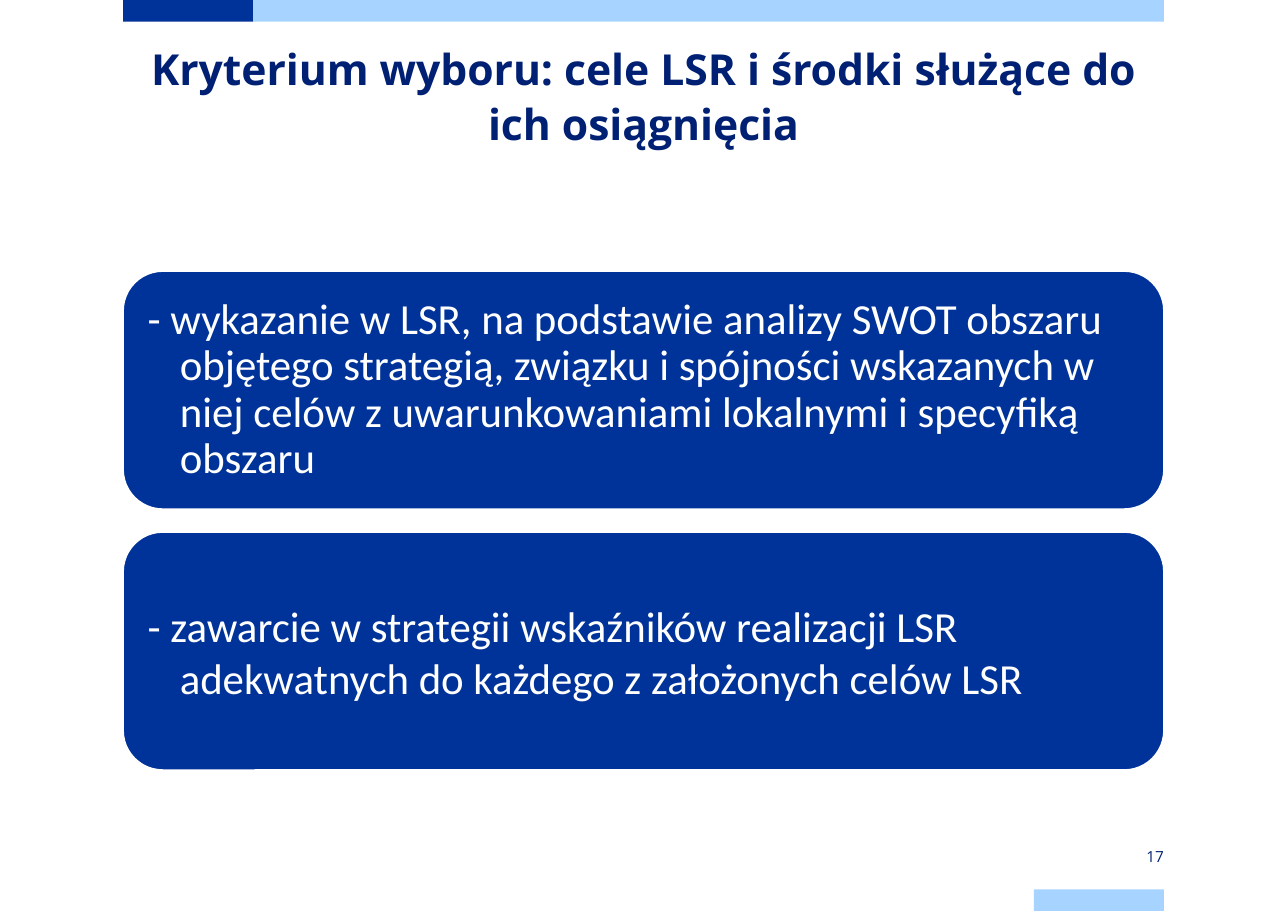
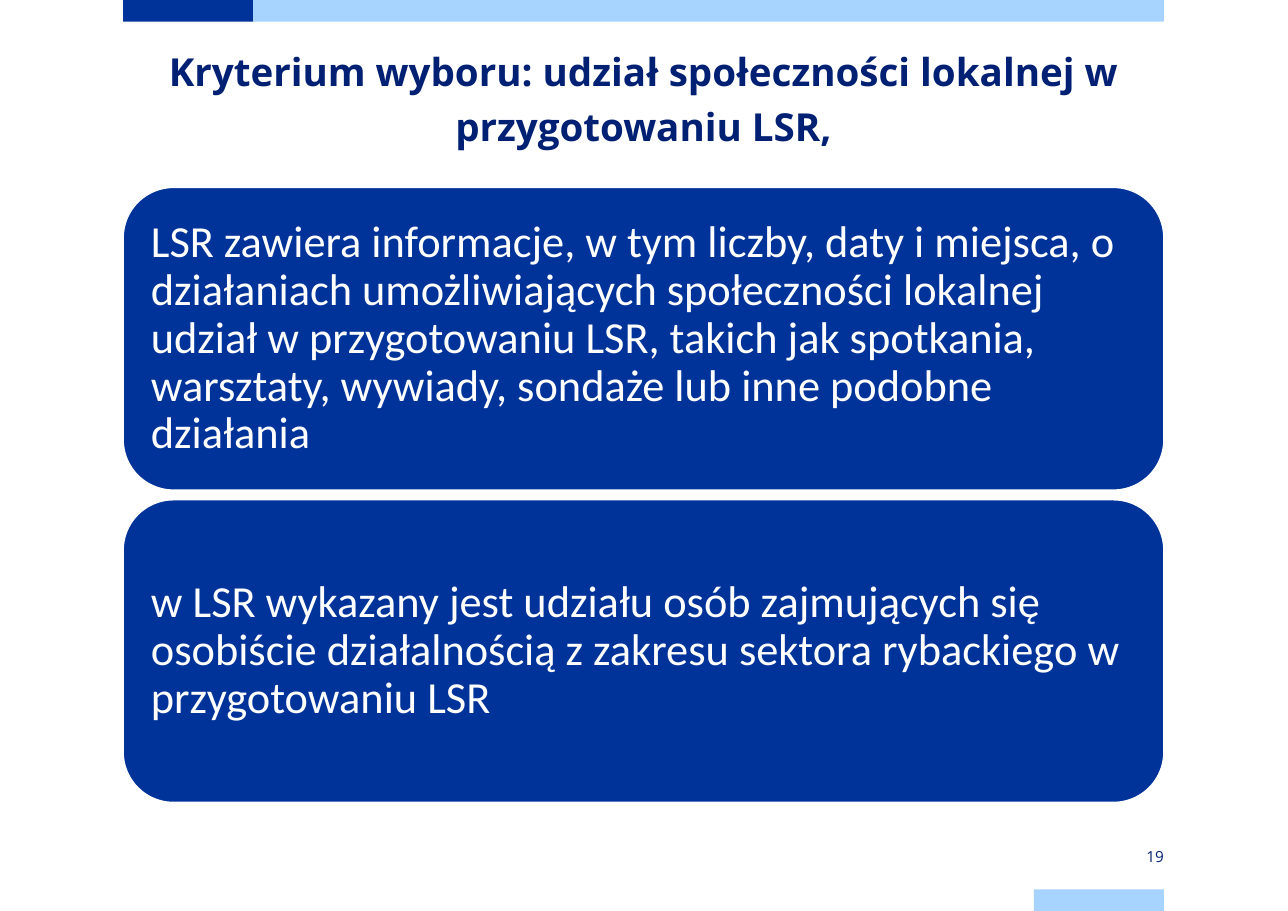
"""Build two slides on the selection criteria for local strategies."""
from pptx import Presentation
from pptx.dml.color import RGBColor
from pptx.enum.shapes import MSO_SHAPE
from pptx.enum.text import MSO_ANCHOR, MSO_AUTO_SIZE, PP_ALIGN
from pptx.util import Cm, Pt

COLORS = {"navy": "003399", "sky": "A6D3FF", "ink": "002073", "white": "FFFFFF"}
HEAD, BODY = "Open Sans", "Calibri"
LEFT, WIDTH, UNIT, BAND = 2.84, 24, 3, 0.5
PAGE_W, PAGE_H = 29.7, 21

SLIDES = [
    {
        "title": "Kryterium wyboru: cele LSR i środki służące do ich osiągnięcia",
        "size": 27.9,
        "number": "17",
        "box": (LEFT, 6.25, WIDTH, 11.5),
        "gap": 0.53,
        "font": 28,
        "hang": 0.74,
        "panels": [
            ("- wykazanie w LSR, na podstawie analizy SWOT obszaru objętego "
             "strategią, związku i spójności wskazanych w niej celów z "
             "uwarunkowaniami lokalnymi i specyfiką obszaru", 0.9),
            ("- zawarcie w strategii wskaźników realizacji LSR adekwatnych do "
             "każdego z założonych celów LSR", 1.02),
        ],
    },
    {
        "title": "Kryterium wyboru: udział społeczności lokalnej w przygotowaniu LSR,",
        "size": 25.2,
        "number": "19",
        "box": (LEFT, 4.32, WIDTH, 14.18),
        "gap": 0.22,
        "font": 29,
        "hang": 0,
        "panels": [
            ("LSR zawiera informacje, w tym liczby, daty i miejsca, o działaniach "
             "umożliwiających społeczności lokalnej udział w przygotowaniu LSR, "
             "takich jak spotkania, warsztaty, wywiady, sondaże lub inne podobne "
             "działania", 0.9),
            ("w LSR wykazany jest udziału osób zajmujących się osobiście "
             "działalnością z zakresu sektora rybackiego w przygotowaniu LSR", 0.9),
        ],
    },
]


def color(name):
    """Return the named colour."""
    return RGBColor.from_string(COLORS[name])


def write(shape, text, font, size, tint, align, anchor, pad=(0, 0), bold=False):
    """Set and format the text of a shape and return its paragraph."""
    frame = shape.text_frame
    frame.text = text
    frame.word_wrap = True
    frame.auto_size = MSO_AUTO_SIZE.NONE
    frame.vertical_anchor = anchor
    frame.margin_left = frame.margin_right = Cm(pad[0])
    frame.margin_top = frame.margin_bottom = Cm(pad[1])
    para = frame.paragraphs[0]
    para.alignment = align
    para.space_before = Pt(0)
    for run in para.runs:
        run.font.name = font
        run.font.size = Pt(size)
        run.font.bold = bold
        run.font.color.rgb = color(tint)
    return para


def block(slide, kind, box, fill):
    """Add a filled shape without line or shadow."""
    shape = slide.shapes.add_shape(kind, *map(Cm, box))
    shape.shadow.inherit = False
    shape.fill.solid()
    shape.fill.fore_color.rgb = color(fill)
    shape.line.fill.background()
    return shape


def bands(slide, box):
    """Draw the bands within the page box and move them to the layout."""
    left, top, width, height = box
    parts = [
        (left, top, UNIT, "navy"),
        (left + UNIT, top, width - UNIT, "sky"),
        (left + width - UNIT, top + height - BAND, UNIT, "sky"),
    ]
    tree = slide.slide_layout.shapes.element
    for place, (x, y, wide, fill) in enumerate(parts, 2):
        band = block(slide, MSO_SHAPE.RECTANGLE, (x, y, wide, BAND), fill)
        tree.insert(place, band.element)


def heading(slide, box, text, size):
    """Place and format the title."""
    title = slide.shapes.title
    title.left, title.top, title.width, title.height = map(Cm, box)
    para = write(title, text, HEAD, size, "ink", PP_ALIGN.CENTER,
                 MSO_ANCHOR.TOP, bold=True)
    para.line_spacing = Pt(36)


def panels(slide, box, items, gap, size, hang):
    """Stack equal rounded panels in the box."""
    left, top, width, height = box
    tall = (height - gap * (len(items) - 1)) / len(items)
    for row, (text, pitch) in enumerate(items):
        spot = (left, top + row * (tall + gap), width, tall)
        panel = block(slide, MSO_SHAPE.ROUNDED_RECTANGLE, spot, "navy")
        panel.line.color.rgb = color("white")
        panel.line.width = Pt(1)
        para = write(panel, text, BODY, size, "white", PP_ALIGN.LEFT,
                     MSO_ANCHOR.MIDDLE, (0.3, 0.3))
        para.line_spacing = pitch
        props = para._p.get_or_add_pPr()
        props.set("marL", str(Cm(hang)))
        props.set("indent", str(-Cm(hang)))


def footer(slide, box, number):
    """Write the page number."""
    label = slide.shapes.add_textbox(*map(Cm, box))
    write(label, number, HEAD, 10, "ink", PP_ALIGN.RIGHT,
          MSO_ANCHOR.MIDDLE, (0, 0.2))


def main():
    """Build and save the deck."""
    deck = Presentation()
    deck.slide_width, deck.slide_height = Cm(PAGE_W), Cm(PAGE_H)
    layout = deck.slide_layouts[5]
    for index, data in enumerate(SLIDES):
        slide = deck.slides.add_slide(layout)
        if index == 0:
            bands(slide, (LEFT, 0, WIDTH, PAGE_H))
        heading(slide, (LEFT, 0.9, WIDTH, 3), data["title"], data["size"])
        panels(slide, data["box"], data["panels"], data["gap"],
               data["font"], data["hang"])
        footer(slide, (LEFT + WIDTH - UNIT, 19.5, UNIT, BAND), data["number"])
    deck.save("out.pptx")


if __name__ == "__main__":
    main()
